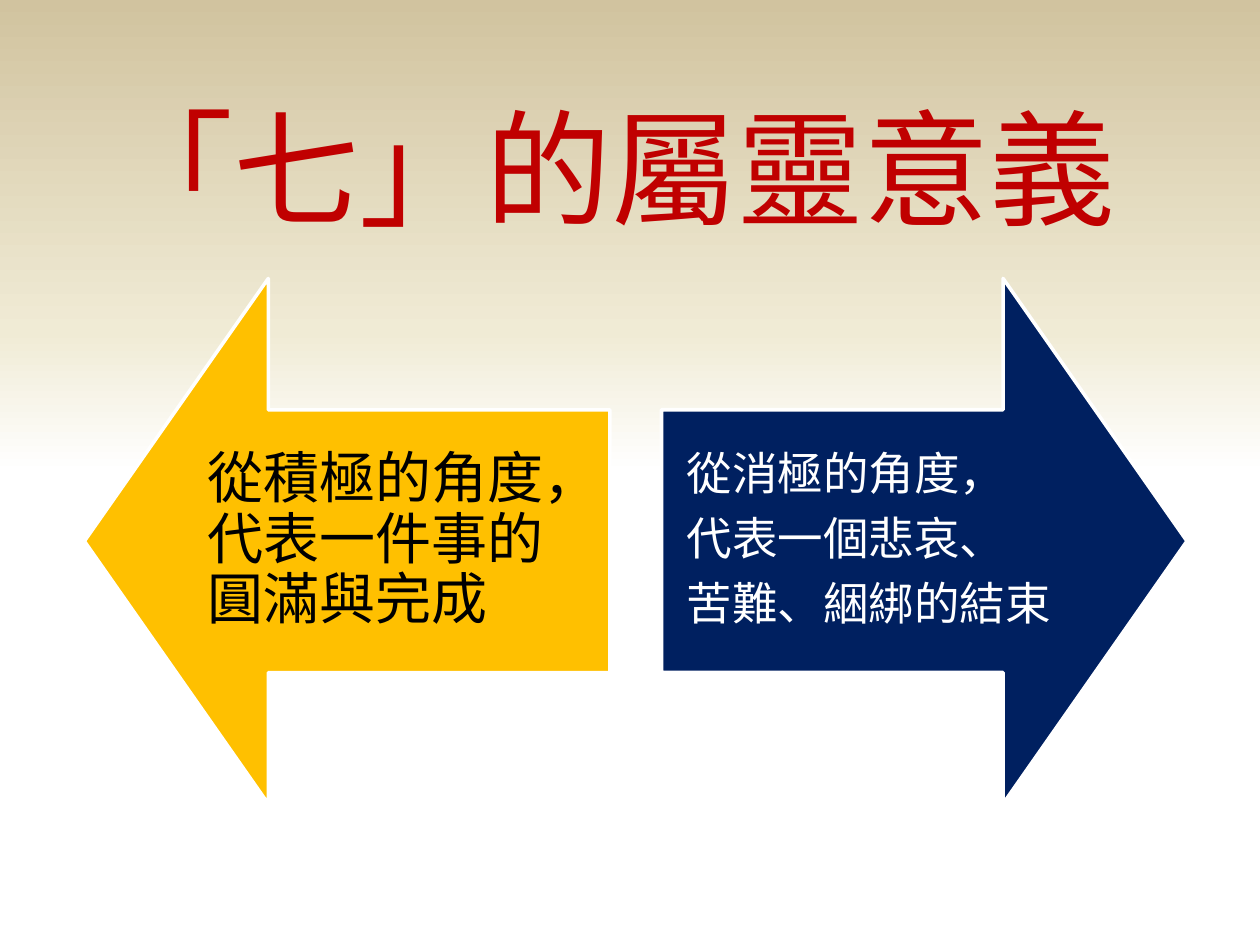
from dataclasses import dataclass

from lxml import etree
from pptx import Presentation
from pptx.dml.color import RGBColor
from pptx.enum import shapes, text
from pptx.oxml import ns
from pptx.util import Inches, Pt


@dataclass(frozen=True)
class Theme:
    font: str = "Calibri"
    title: str = "C00000"
    gold: str = "FFC000"
    navy: str = "002060"
    black: str = "000000"
    white: str = "FFFFFF"
    backdrop: tuple = ((50, "FFFFFF"), (65, "F0EBD5"), (100, "D1C39F"))
    title_size: int = 72
    gold_size: int = 32
    navy_size: int = 26


THEME = Theme()
ARROW_SIZE = 4.17
ARROW_TOP = 2.21
HEAD = 0.35


def paint_background(page):
    fill = page.background.fill
    fill.gradient()
    fill.gradient_angle = 90
    stops = page.element.find(".//" + ns.qn("a:gsLst"))
    for stop in list(stops):
        stops.remove(stop)
    for percent, color in THEME.backdrop:
        stop = etree.SubElement(stops, ns.qn("a:gs"), pos=str(percent * 1000))
        etree.SubElement(stop, ns.qn("a:srgbClr"), val=color)


def style(para, size, color):
    para.font.name = THEME.font
    para.font.size = Pt(size)
    para.font.color.rgb = RGBColor.from_string(color)
    para.alignment = text.PP_ALIGN.LEFT


def add_title(page, words):
    title = page.shapes.title
    title.left, title.top = Inches(0.75), Inches(0.67)
    title.width, title.height = Inches(8.78), Inches(1.31)
    frame = title.text_frame
    frame.text = words
    frame.word_wrap = False
    frame.auto_size = text.MSO_AUTO_SIZE.SHAPE_TO_FIT_TEXT
    frame.vertical_anchor = text.MSO_ANCHOR.TOP
    style(frame.paragraphs[0], THEME.title_size, THEME.title)


def add_arrow(page, left, rotation, color):
    arrow = page.shapes.add_shape(
        shapes.MSO_SHAPE.UP_ARROW, Inches(left), Inches(ARROW_TOP),
        Inches(ARROW_SIZE), Inches(ARROW_SIZE))
    arrow.rotation = rotation
    arrow.adjustments[0] = 0.5
    arrow.adjustments[1] = HEAD
    arrow.shadow.inherit = False
    arrow.fill.solid()
    arrow.fill.fore_color.rgb = RGBColor.from_string(color)
    arrow.line.color.rgb = RGBColor.from_string(THEME.white)
    arrow.line.width = Pt(2)


def add_arrow_text(page, left, lines, size, color, inset):
    # The text covers the shaft and half of the head
    box = page.shapes.add_textbox(
        Inches(left), Inches(ARROW_TOP + ARROW_SIZE / 4),
        Inches(ARROW_SIZE * (1 - HEAD / 2)), Inches(ARROW_SIZE / 2))
    frame = box.text_frame
    frame.word_wrap = True
    frame.vertical_anchor = text.MSO_ANCHOR.MIDDLE
    frame.margin_left = frame.margin_right = Inches(inset)
    frame.margin_top = frame.margin_bottom = Inches(inset)
    frame.text = "\n".join(lines)
    for para in frame.paragraphs:
        style(para, size, color)
        para.line_spacing = 0.9
        para.space_after = Pt(round(size * 0.35))


def main():
    deck = Presentation()
    deck.slide_width, deck.slide_height = Inches(10), Inches(7.5)
    page = deck.slides.add_slide(deck.slide_layouts[5])
    paint_background(page)
    add_title(page, "「七」的屬靈意義")

    # Positive meaning, pointing left
    left = 0.67
    add_arrow(page, left, 270, THEME.gold)
    add_arrow_text(page, left + ARROW_SIZE * HEAD / 2,
                   ["從積極的角度，代表一件事的圓滿與完成"],
                   THEME.gold_size, THEME.black, 0.25)

    # Negative meaning, pointing right
    left = 5.25
    add_arrow(page, left, 90, THEME.navy)
    add_arrow_text(page, left,
                   ["從消極的角度，", "代表一個悲哀、", "苦難、綑綁的結束"],
                   THEME.navy_size, THEME.white, 0.2)

    deck.save("out.pptx")


if __name__ == "__main__":
    main()
